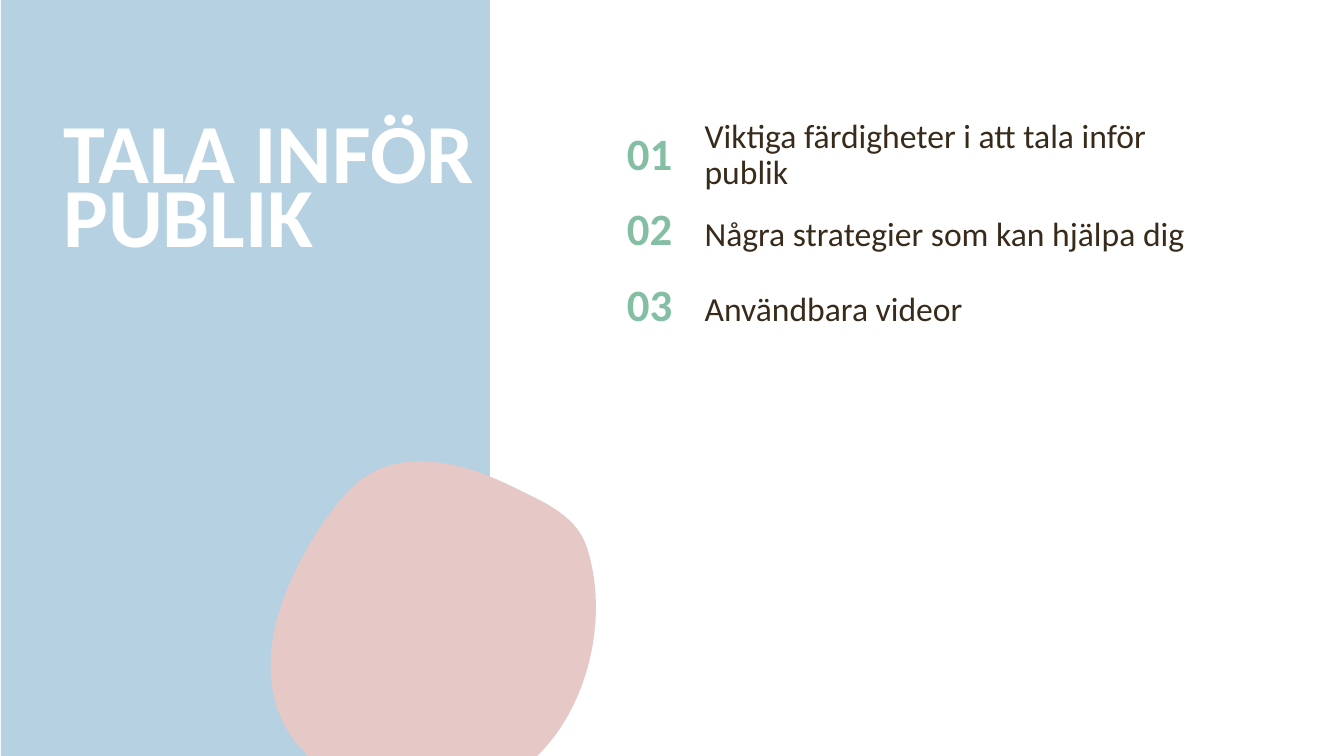
import lxml.etree
import pptx
import pptx.util
import pptx.dml.color
import pptx.enum.shapes
import pptx.enum.text
import pptx.oxml.ns

Inches = pptx.util.Inches
Pt = pptx.util.Pt
qn = pptx.oxml.ns.qn

COLORS = {"panel": "B6D1E1", "blob": "E6C8C7", "number": "84BFA4",
          "text": "382B1B", "title": "FFFFFF"}
FONT = "Calibri"
TOPICS = ["Viktiga färdigheter i att tala inför publik",
          "Några strategier som kan hjälpa dig",
          "Användbara videor"]

# Blob outline: start point, then two control points and an end per curve
BLOB = (2.69, 4.58, 3.22, 3.32)
START = (4.64, 4.65)
CURVES = [
    ((4.21, 4.53), (3.76, 4.52), (3.42, 4.91)),
    ((3.09, 5.28), (2.77, 5.88), (2.7, 6.37)),
    ((2.54, 7.53), (3.57, 8.03), (4.61, 7.87)),
    ((5.62, 7.71), (6.13, 6.38), (5.82, 5.43)),
    ((5.73, 5.15), (5.46, 5.01), (5.21, 4.89)),
    ((5.03, 4.8), (4.84, 4.71), START),
]


def color(name):
    return pptx.dml.color.RGBColor.from_string(COLORS[name])


def paint(shape, name):
    shape.shadow.inherit = False
    shape.fill.solid()
    shape.fill.fore_color.rgb = color(name)
    shape.line.fill.background()


def add_panel(slide):
    kind = pptx.enum.shapes.MSO_SHAPE.RECTANGLE
    panel = slide.shapes.add_shape(
        kind, Inches(0.01), 0, Inches(4.85), Inches(7.5))
    paint(panel, "panel")


def add_blob(slide):
    left, top, width, height = map(Inches, BLOB)
    ends = [tuple(map(Inches, curve[-1])) for curve in CURVES]
    outline = slide.shapes.build_freeform(*map(Inches, START))
    outline.add_line_segments(ends, close=True)
    blob = outline.convert_to_shape()
    blob.left, blob.top, blob.width, blob.height = left, top, width, height

    # Turn the straight sides into curves within the blob's frame
    track = blob._element.find(".//" + qn("a:path"))
    track.set("w", str(width))
    track.set("h", str(height))

    def place(node, point):
        node.set("x", str(Inches(point[0]) - left))
        node.set("y", str(Inches(point[1]) - top))

    place(track.find(qn("a:moveTo") + "/" + qn("a:pt")), START)
    for side, curve in zip(track.findall(qn("a:lnTo")), CURVES):
        arc = lxml.etree.Element(qn("a:cubicBezTo"))
        for point in curve:
            place(lxml.etree.SubElement(arc, qn("a:pt")), point)
        track.replace(side, arc)
    paint(blob, "blob")


def add_text(slide, text, box, size, tint, bold=False, space=0.9, middle=True):
    frame = slide.shapes.add_textbox(*map(Inches, box)).text_frame
    frame.word_wrap = True
    if middle:
        frame.vertical_anchor = pptx.enum.text.MSO_ANCHOR.MIDDLE
    frame.text = text
    line = frame.paragraphs[0]
    line.line_spacing = space
    font = line.runs[0].font
    font.name = FONT
    font.size = Pt(size)
    font.bold = bold
    font.color.rgb = color(tint)
    return line


def add_topic(slide, index, text):
    top = 1.17 + 0.75 * index
    add_text(slide, f"{index + 1:02}", (6.12, top, 0.77, 0.75),
             32, "number", bold=True)
    line = add_text(slide, text, (6.89, top, 5.25, 0.75), 24, "text",
                    space=1.07 if index else 0.9)
    if index:
        line.space_after = Pt(8)


def main():
    deck = pptx.Presentation()
    deck.slide_width = Inches(13.33)
    deck.slide_height = Inches(7.5)
    slide = deck.slides.add_slide(deck.slide_layouts[6])

    # Left side
    add_panel(slide)
    add_text(slide, "TALA INFÖR PUBLIK", (0.53, 1.3, 5.33, 0.76), 60,
             "title", bold=True, space=Pt(46), middle=False)
    add_blob(slide)

    # Numbered topics
    for index, text in enumerate(TOPICS):
        add_topic(slide, index, text)

    deck.save("out.pptx")


if __name__ == "__main__":
    main()
